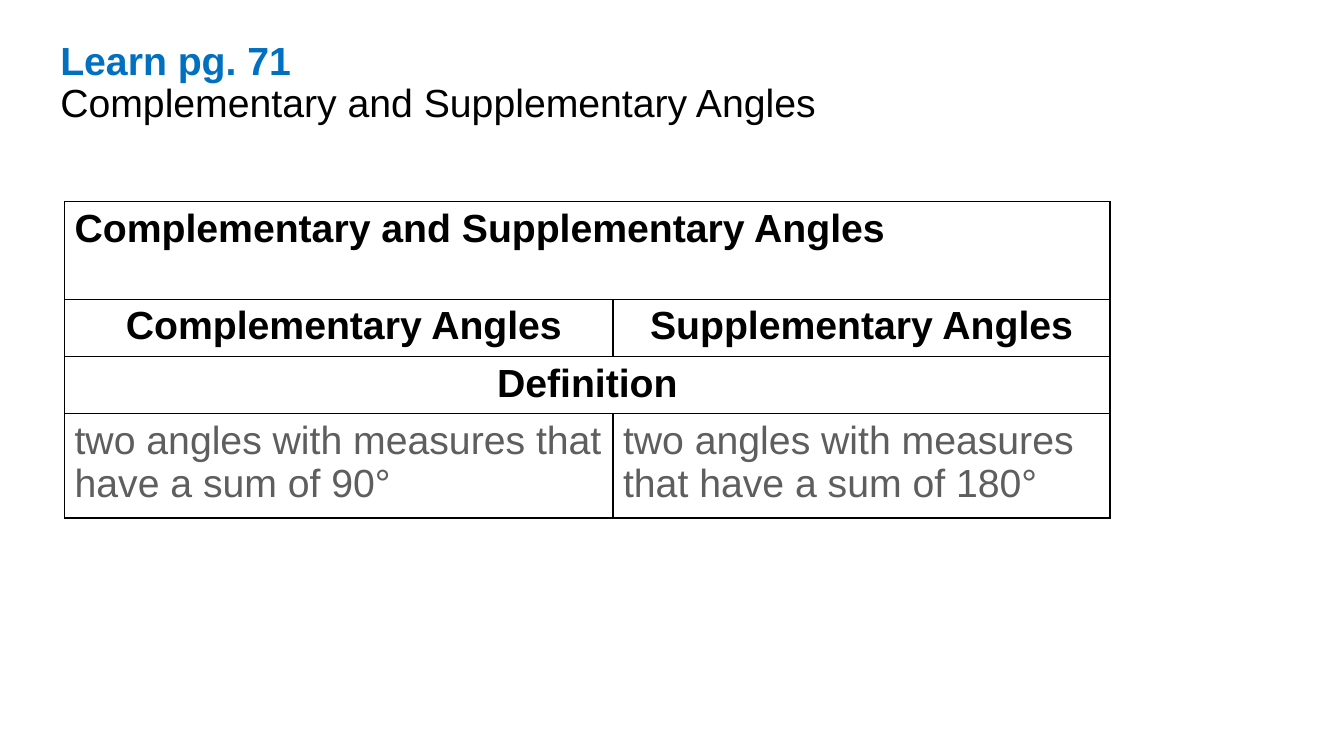
import pptx
import pptx.util
import pptx.dml.color
import pptx.enum.text
import pptx.oxml
import pptx.oxml.ns

Inches, Pt = pptx.util.Inches, pptx.util.Pt
ALIGN = pptx.enum.text.PP_ALIGN


def color(value):
    return pptx.dml.color.RGBColor.from_string(value)


def add_run(p, text, fill="000000", bold=False):
    r = p.add_run()
    r.text = text
    r.font.name = "Arial"
    r.font.size = Pt(28)
    r.font.bold = bold
    r.font.color.rgb = color(fill)


def add_borders(cell):
    props = cell._tc.get_or_add_tcPr()
    for i, side in enumerate(("lnL", "lnR", "lnT", "lnB")):
        props.insert(i, pptx.oxml.parse_xml(
            f'<a:{side} {pptx.oxml.ns.nsdecls("a")} w="12700"><a:solidFill>'
            f'<a:srgbClr val="000000"/></a:solidFill></a:{side}>'))


def add_heading(s, left, top, width, height):
    tf = s.shapes.add_textbox(Inches(left), Inches(top), Inches(width), Inches(height)).text_frame
    tf.word_wrap = True
    lines = [("Learn pg. 71", "0070C0", True),
             ("Complementary and Supplementary Angles", "000000", False)]
    for i, line in enumerate(lines):
        p = tf.add_paragraph() if i else tf.paragraphs[0]
        p.line_spacing = 0.9
        add_run(p, *line)


def add_angle_table(s, left, top, col_widths, row_heights):
    frame = s.shapes.add_table(len(row_heights), len(col_widths), Inches(left), Inches(top),
                               Inches(sum(col_widths)), Inches(sum(row_heights)))
    table = frame.table
    table.first_row = table.horz_banding = False
    for column, width in zip(table.columns, col_widths):
        column.width = Inches(width)
    for row, height in zip(table.rows, row_heights):
        row.height = Inches(height)

    # Plain white cells with black borders
    for cell in table.iter_cells():
        cell.fill.solid()
        cell.fill.fore_color.rgb = color("FFFFFF")
        add_borders(cell)

    # Cell texts; a row with one text spans the table
    rows = [
        (["Complementary and Supplementary Angles"], ALIGN.LEFT, "000000", True),
        (["Complementary Angles", "Supplementary Angles"], ALIGN.CENTER, "000000", True),
        (["Definition"], ALIGN.CENTER, "000000", True),
        (["two angles with measures that have a sum of 90°",
          "two angles with measures that have a sum of 180°"], ALIGN.LEFT, "5E5E5E", False),
    ]
    for i, (texts, align, fill, bold) in enumerate(rows):
        if len(texts) == 1:
            table.cell(i, 0).merge(table.cell(i, len(col_widths) - 1))
        for j, text in enumerate(texts):
            p = table.cell(i, j).text_frame.paragraphs[0]
            p.alignment = align
            add_run(p, text, fill, bold)

    # The first column heading sits slightly right of centre
    table.cell(1, 0).margin_left = Inches(0.2)


def main():
    prs = pptx.Presentation()
    prs.slide_width, prs.slide_height = Inches(13.33), Inches(7.5)
    s = prs.slides.add_slide(prs.slide_layouts[6])
    add_heading(s, 0.5, 0.36, 9.73, 1.41)
    add_angle_table(s, 0.64, 2, [5.44, 4.93], [0.97, 0.53, 0.53, 0.97])
    prs.save("out.pptx")


if __name__ == "__main__":
    main()
